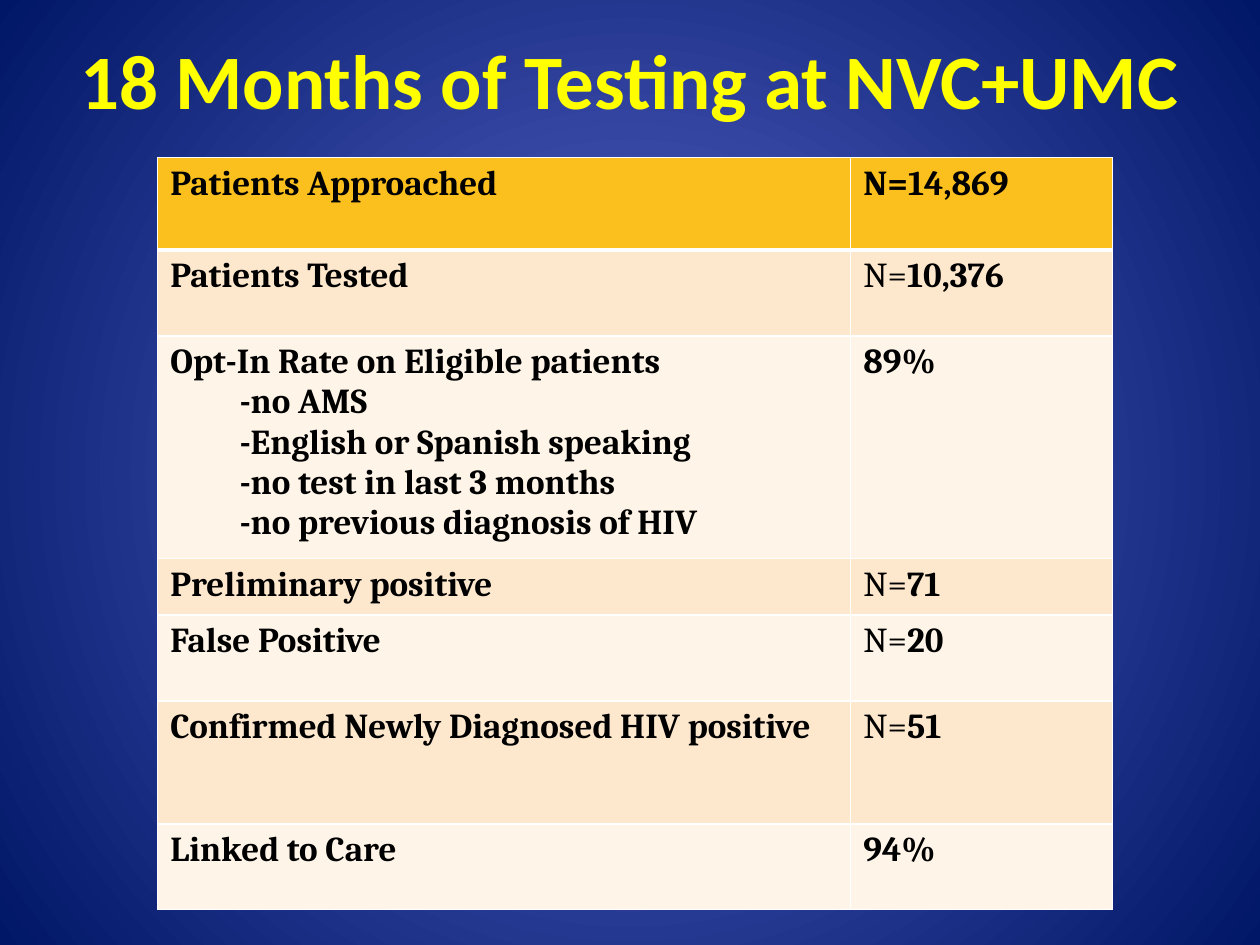
from lxml.etree import SubElement
from pptx import Presentation
from pptx.dml.color import RGBColor as Rgb
from pptx.enum.text import MSO_ANCHOR as Anchor, PP_ALIGN as Align
from pptx.oxml import parse_xml
from pptx.oxml.ns import nsdecls, qn
from pptx.util import Cm, Pt

HEADING = "18 Months of Testing at NVC+UMC"
CRITERIA = [
    "-no AMS",
    "-English or Spanish speaking",
    "-no test in last 3 months",
    "-no previous diagnosis of HIV",
]
MEASURES = [
    ("Patients Approached", [], [("N=14,869", True)], 1.86),
    ("Patients Tested", [], [("N=", False), ("10,376", True)], 1.73),
    ("Opt-In Rate on Eligible patients", CRITERIA, [("89%", True)], 4.33),
    ("Preliminary positive", [], [("N=", False), ("71", True)], 1.14),
    ("False Positive", [], [("N=", False), ("20", True)], 1.73),
    ("Confirmed Newly Diagnosed HIV positive", [], [("N=", False), ("51", True)], 2.48),
    ("Linked to Care", [], [("94%", True)], 1.73),
]
COLUMN_WIDTHS = [13.97, 5.28]
THEME = {
    "glow": "5B69CE", "edge": "001666", "heading": "FFFF00", "ink": "000000",
    "header": "FBC01E", "bands": ["FEF4E8", "FDE8CD"], "rule": "FFFFFF",
    "heading_font": "Calibri", "body_font": "Cambria",
    "heading_size": 44, "body_size": 20, "thin": 1, "thick": 3,
}


def add_run(paragraph, text, bold, part):
    run = paragraph.add_run()
    run.text = text
    run.font.bold = bold
    run.font.name = THEME[f"{part}_font"]
    run.font.size = Pt(THEME[f"{part}_size"])
    run.font.color.rgb = Rgb.from_string(THEME["heading" if part == "heading" else "ink"])


def paint_background(slide):
    fill = slide.background.fill
    fill.gradient()
    for stop, position, color in zip(fill.gradient_stops, (0, 1), ("glow", "edge")):
        stop.position = position
        stop.color.rgb = Rgb.from_string(THEME[color])
    linear = slide.element.xpath(".//a:lin")[0]
    linear.getparent().replace(linear, parse_xml(
        f'<a:path {nsdecls("a")} path="circle">'
        '<a:fillToRect l="50000" t="50000" r="50000" b="50000"/></a:path>'))


def style_cell(cell, row):
    properties = cell._tc.get_or_add_tcPr()
    thick_side = {0: "B", 1: "T"}.get(row)
    for side in "LRTB":
        width = THEME["thick" if side == thick_side else "thin"]
        line = SubElement(properties, qn(f"a:ln{side}"), w=str(Pt(width)))
        solid = SubElement(line, qn("a:solidFill"))
        SubElement(solid, qn("a:srgbClr"), val=THEME["rule"])
    cell.fill.solid()
    cell.fill.fore_color.rgb = Rgb.from_string(THEME["bands"][row % 2] if row else THEME["header"])


def add_heading(slide):
    frame = slide.shapes.add_textbox(Cm(1.27), Cm(0), Cm(22.86), Cm(3.18)).text_frame
    frame.word_wrap = True
    frame.vertical_anchor = Anchor.MIDDLE
    frame.paragraphs[0].alignment = Align.CENTER
    add_run(frame.paragraphs[0], HEADING, True, "heading")


def add_measures(slide):
    heights = [measure[-1] for measure in MEASURES]
    table = slide.shapes.add_table(
        len(MEASURES), len(COLUMN_WIDTHS), Cm(3.18), Cm(3.18),
        Cm(sum(COLUMN_WIDTHS)), Cm(sum(heights))).table
    for column, width in zip(table.columns, COLUMN_WIDTHS):
        column.width = Cm(width)
    for row, (label, criteria, result, height) in enumerate(MEASURES):
        table.rows[row].height = Cm(height)
        label_cell, result_cell = table.cell(row, 0), table.cell(row, 1)
        for cell in (label_cell, result_cell):
            style_cell(cell, row)
        add_run(label_cell.text_frame.paragraphs[0], label, True, "body")
        for criterion in criteria:
            paragraph = label_cell.text_frame.add_paragraph()
            paragraph._p.get_or_add_pPr().set("marL", str(Cm(1.4)))
            add_run(paragraph, criterion, True, "body")
        for text, bold in result:
            add_run(result_cell.text_frame.paragraphs[0], text, bold, "body")


def main():
    """Build the testing results slide."""
    deck = Presentation()
    deck.slide_width, deck.slide_height = Cm(25.4), Cm(19.05)
    slide = deck.slides.add_slide(deck.slide_layouts[6])
    paint_background(slide)
    add_heading(slide)
    add_measures(slide)
    deck.save("out.pptx")


if __name__ == "__main__":
    main()
